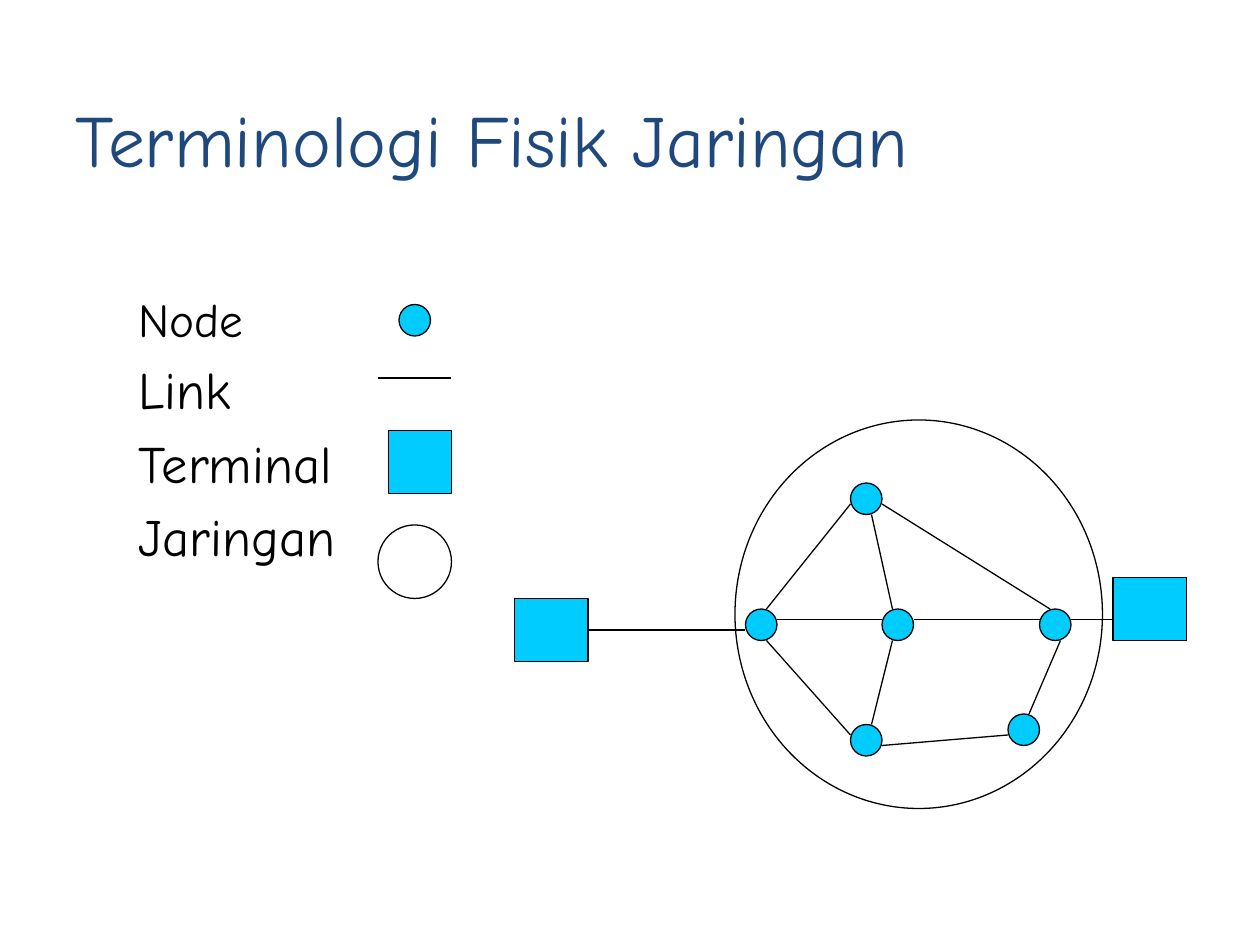
from pptx import Presentation
from pptx.dml.color import RGBColor
from pptx.enum.shapes import MSO_CONNECTOR, MSO_SHAPE
from pptx.enum.text import MSO_ANCHOR, MSO_AUTO_SIZE, PP_ALIGN
from pptx.oxml.ns import qn
from pptx.util import Pt
from lxml import etree

OVAL, RECT = MSO_SHAPE.OVAL, MSO_SHAPE.RECTANGLE
STRAIGHT = MSO_CONNECTOR.STRAIGHT
RIGHT_SIDE = 3
FONT = "Comic Neue"
BLACK, NAVY, CYAN = "000000", "1F497D", "00CCFF"

TITLE = "Terminologi Fisik Jaringan"
TERMS = [("Node", 27), ("Link", 30), ("Terminal", 30), ("Jaringan", 30)]

# All places and sizes are in points
NODE_SIZE = (18, 18)
TERMINAL_SIZE = (42, 36)
NETWORK = (420, 240, 210, 222)
NODES = [(426, 348), (504, 348), (486, 414), (486, 276), (594, 348), (576, 408)]
TERMINALS = [(294, 342), (636, 330)]
TERMINAL_LINK = (336, 360, 426, 360)
LINKS = [
    (438, 348, 486, 288),
    (438, 366, 486, 420),
    (498, 294, 510, 348),
    (504, 288, 600, 348),
    (522, 354, 594, 354),
    (510, 366, 498, 414),
    (504, 426, 576, 420),
    (606, 366, 588, 408),
    (612, 354, 636, 354),
    (444, 354, 504, 354),
]
LEGEND_SHAPES = [
    (OVAL, (228, 174, *NODE_SIZE), CYAN),
    (RECT, (222, 246, 36, 36), CYAN),
    (OVAL, (216, 300, 42, 42), None),
]
LEGEND_LINK = (216, 216, 258, 216)


def color(hex_value):
    return RGBColor.from_string(hex_value)


def outline(shape):
    shape.line.color.rgb = color(BLACK)
    shape.line.width = Pt(0.75)


def add_symbol(shapes, kind, box, fill=None):
    symbol = shapes.add_shape(kind, *map(Pt, box))
    symbol.shadow.inherit = False
    if fill:
        symbol.fill.solid()
        symbol.fill.fore_color.rgb = color(fill)
    else:
        symbol.fill.background()
    outline(symbol)
    return symbol


def add_link(shapes, ends):
    link = shapes.add_connector(STRAIGHT, *map(Pt, ends))
    outline(link)
    etree.SubElement(link._element.spPr, qn("a:effectLst"))
    return link


def place(placeholder, box, anchor):
    for side, length in zip(("left", "top", "width", "height"), box):
        setattr(placeholder, side, Pt(length))
    frame = placeholder.text_frame
    for key, value in {"auto_size": MSO_AUTO_SIZE.NONE, "word_wrap": True,
                       "vertical_anchor": anchor}.items():
        setattr(frame, key, value)
    return frame


def write(paragraph, text, size, text_color):
    paragraph.alignment = PP_ALIGN.LEFT
    run = paragraph.add_run()
    run.text = text
    for key, value in {"name": FONT, "size": Pt(size)}.items():
        setattr(run.font, key, value)
    run.font.color.rgb = color(text_color)


def remove_bullet(paragraph, indent):
    properties = paragraph._p.get_or_add_pPr()
    properties.set("marL", str(Pt(indent)))
    properties.set("indent", str(-Pt(indent)))
    etree.SubElement(properties, qn("a:buNone"))


def add_network(slide):
    network = slide.shapes.add_group_shape().shapes
    add_symbol(network, OVAL, NETWORK)
    for corner in NODES:
        add_symbol(network, OVAL, corner + NODE_SIZE, CYAN)
    left_terminal, _ = [add_symbol(network, RECT, corner + TERMINAL_SIZE, CYAN)
                        for corner in TERMINALS]
    add_link(network, TERMINAL_LINK).begin_connect(left_terminal, RIGHT_SIDE)
    for ends in LINKS:
        add_link(network, ends)


def main():
    prs = Presentation()
    prs.slide_width, prs.slide_height = Pt(720), Pt(540)
    slide = prs.slides.add_slide(prs.slide_layouts[1])
    title, terms = slide.placeholders

    heading = place(title, (36, 18, 606, 90), MSO_ANCHOR.BOTTOM)
    write(heading.paragraphs[0], TITLE, 42, NAVY)

    term_list = place(terms, (72, 162, 606, 318), MSO_ANCHOR.TOP)
    for i, (term, size) in enumerate(TERMS):
        paragraph = term_list.add_paragraph() if i else term_list.paragraphs[0]
        write(paragraph, term, size, BLACK)
        remove_bullet(paragraph, 27)

    add_network(slide)
    for kind, box, fill in LEGEND_SHAPES:
        add_symbol(slide.shapes, kind, box, fill)
    add_link(slide.shapes, LEGEND_LINK)

    prs.save("out.pptx")


if __name__ == "__main__":
    main()
